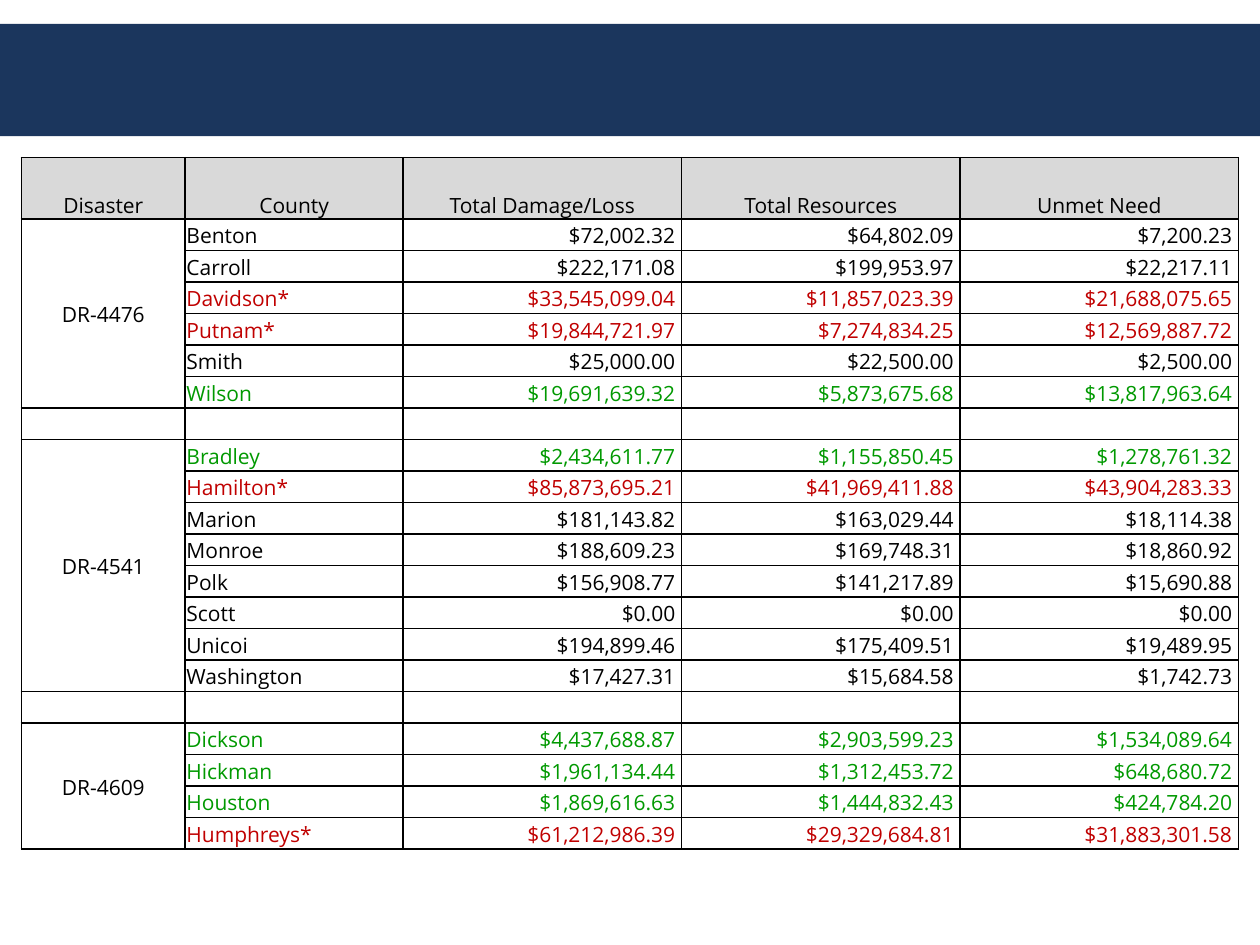
"""Build a slide with a table of disaster losses, resources and unmet need by county."""
from typing import NamedTuple

from lxml.etree import SubElement
from pptx import Presentation
from pptx.dml.color import RGBColor
from pptx.enum.shapes import MSO_SHAPE
from pptx.enum.text import MSO_ANCHOR as Anchor, PP_ALIGN as Align
from pptx.oxml.ns import qn
from pptx.util import Inches, Pt

COLORS = {
    "band": "1B365D",
    "header": "D9D9D9",
    "body": "FFFFFF",
    "border": "000000",
    "black": "000000",
    "red": "C00000",
    "green": "009900",
}
FONT = "Open Sans"
FONT_SIZE = Pt(12)
HEADERS = ("Disaster", "County", "Total Damage/Loss", "Total Resources", "Unmet Need")
COL_WIDTHS = (1.3, 1.73, 2.21, 2.21, 2.21)
HEADER_HEIGHT, ROW_HEIGHT = 0.49, 0.25
CELL_MARGIN, AMOUNT_MARGIN = 0.01, 0.05


class County(NamedTuple):
    name: str
    damage: str
    resources: str
    unmet: str
    color: str = "black"


class Disaster(NamedTuple):
    name: str
    counties: tuple[County, ...]


DISASTERS = (
    Disaster("DR-4476", (
        County("Benton", "$72,002.32", "$64,802.09", "$7,200.23"),
        County("Carroll", "$222,171.08", "$199,953.97", "$22,217.11"),
        County("Davidson*", "$33,545,099.04", "$11,857,023.39", "$21,688,075.65", "red"),
        County("Putnam*", "$19,844,721.97", "$7,274,834.25", "$12,569,887.72", "red"),
        County("Smith", "$25,000.00", "$22,500.00", "$2,500.00"),
        County("Wilson", "$19,691,639.32", "$5,873,675.68", "$13,817,963.64", "green"),
    )),
    Disaster("DR-4541", (
        County("Bradley", "$2,434,611.77", "$1,155,850.45", "$1,278,761.32", "green"),
        County("Hamilton*", "$85,873,695.21", "$41,969,411.88", "$43,904,283.33", "red"),
        County("Marion", "$181,143.82", "$163,029.44", "$18,114.38"),
        County("Monroe", "$188,609.23", "$169,748.31", "$18,860.92"),
        County("Polk", "$156,908.77", "$141,217.89", "$15,690.88"),
        County("Scott", "$0.00", "$0.00", "$0.00"),
        County("Unicoi", "$194,899.46", "$175,409.51", "$19,489.95"),
        County("Washington", "$17,427.31", "$15,684.58", "$1,742.73"),
    )),
    Disaster("DR-4609", (
        County("Dickson", "$4,437,688.87", "$2,903,599.23", "$1,534,089.64", "green"),
        County("Hickman", "$1,961,134.44", "$1,312,453.72", "$648,680.72", "green"),
        County("Houston", "$1,869,616.63", "$1,444,832.43", "$424,784.20", "green"),
        County("Humphreys*", "$61,212,986.39", "$29,329,684.81", "$31,883,301.58", "red"),
    )),
)


def rgb(name: str) -> RGBColor:
    return RGBColor.from_string(COLORS[name])


def add_band(slide) -> None:
    sp = slide.shapes.add_shape(
        MSO_SHAPE.RECTANGLE, 0, Inches(0.19), Inches(10), Inches(0.89))
    sp.shadow.inherit = False
    sp.fill.solid()
    sp.fill.fore_color.rgb = rgb("band")
    sp.line.fill.background()


def format_cell(cell, fill: str) -> None:
    tc_pr = cell._tc.get_or_add_tcPr()
    for side in ("lnL", "lnR", "lnT", "lnB"):
        ln = SubElement(tc_pr, qn(f"a:{side}"), w=str(Pt(1)))
        line_fill = SubElement(ln, qn("a:solidFill"))
        SubElement(line_fill, qn("a:srgbClr"), val=COLORS["border"])
    cell.fill.solid()
    cell.fill.fore_color.rgb = rgb(fill)
    cell.margin_left = cell.margin_right = cell.margin_top = Inches(CELL_MARGIN)
    cell.margin_bottom = 0
    cell.vertical_anchor = Anchor.MIDDLE
    p = cell.text_frame.paragraphs[0]
    SubElement(p._p, qn("a:endParaRPr"), sz=str(int(FONT_SIZE.pt * 100)))


def write(cell, text: str, align: Align, color: str = "black") -> None:
    p = cell.text_frame.paragraphs[0]
    p.alignment = align
    r = p.add_run()
    r.text = text
    r.font.name = FONT
    r.font.size = FONT_SIZE
    r.font.color.rgb = rgb(color)


def write_disaster(table, top: int, disaster: Disaster) -> int:
    """Fill one disaster's rows and return the row after them."""
    end = top + len(disaster.counties)
    table.cell(top, 0).merge(table.cell(end - 1, 0))
    write(table.cell(top, 0), disaster.name, Align.CENTER)
    for row, county in enumerate(disaster.counties, top):
        write(table.cell(row, 1), county.name, Align.LEFT, county.color)
        amounts = (county.damage, county.resources, county.unmet)
        for col, amount in enumerate(amounts, 2):
            cell = table.cell(row, col)
            cell.margin_right = Inches(AMOUNT_MARGIN)
            write(cell, amount, Align.RIGHT, county.color)
    return end


def add_loss_table(slide) -> None:
    n_rows = sum(len(d.counties) + 1 for d in DISASTERS)
    height = HEADER_HEIGHT + (n_rows - 1) * ROW_HEIGHT
    table = slide.shapes.add_table(
        n_rows, len(HEADERS), Inches(0.17), Inches(1.25),
        Inches(sum(COL_WIDTHS)), Inches(height)).table
    table.horz_banding = False
    for column, width in zip(table.columns, COL_WIDTHS):
        column.width = Inches(width)
    for i, row in enumerate(table.rows):
        row.height = Inches(ROW_HEIGHT if i else HEADER_HEIGHT)
        for cell in row.cells:
            format_cell(cell, "body" if i else "header")
    for col, header in enumerate(HEADERS):
        cell = table.cell(0, col)
        cell.vertical_anchor = Anchor.BOTTOM
        write(cell, header, Align.CENTER)
    top = 1
    for disaster in DISASTERS:
        top = write_disaster(table, top, disaster) + 1


def main() -> None:
    prs = Presentation()
    prs.slide_width, prs.slide_height = Inches(10), Inches(7.5)
    slide = prs.slides.add_slide(prs.slide_layouts[6])
    add_band(slide)
    add_loss_table(slide)
    prs.save("out.pptx")


if __name__ == "__main__":
    main()
